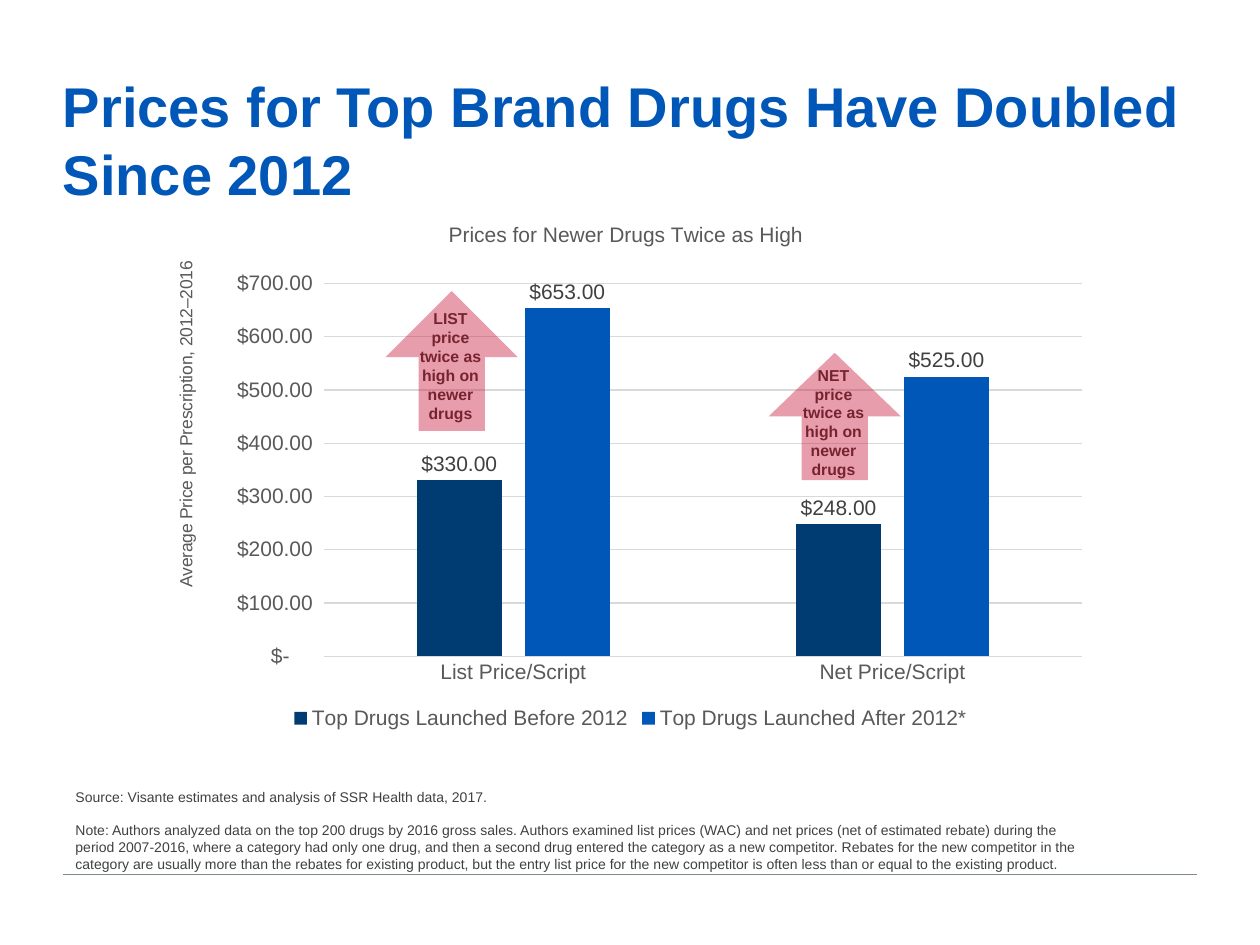
from lxml.etree import SubElement
from pptx import Presentation
from pptx.chart.data import CategoryChartData
from pptx.dml.color import RGBColor
from pptx.enum.chart import (XL_CHART_TYPE as CT, XL_LABEL_POSITION as LP,
                             XL_LEGEND_POSITION as LEG, XL_TICK_MARK as TICK)
from pptx.enum.shapes import MSO_CONNECTOR as CONN, MSO_SHAPE as SHAPE
from pptx.enum.text import PP_ALIGN as AL
from pptx.oxml.ns import qn
from pptx.util import Inches, Pt

# Content
TITLE = "Prices for Top Brand Drugs Have Doubled Since 2012"
NOTES = [
    "Source: Visante estimates and analysis of SSR Health data, 2017.",
    "Note: Authors analyzed data on the top 200 drugs by 2016 gross sales. "
    "Authors examined list prices (WAC) and net prices (net of estimated rebate) "
    "during the period 2007-2016, where a category had only one drug, and then a "
    "second drug entered the category as a new competitor. Rebates for the new "
    "competitor in the category are usually more than the rebates for existing "
    "product, but the entry list price for the new competitor is often less than "
    "or equal to the existing product.",
]
CHART_TITLE = "Prices for Newer Drugs Twice as High"
AXIS_TITLE = "Average Price per Prescription, 2012–2016"
CATEGORIES = ["List Price/Script", "Net Price/Script"]
SERIES = [("Top Drugs Launched Before 2012", (330, 248), "003C71"),
          ("Top Drugs Launched After 2012*", (653, 525), "0057B8")]
MONEY = '_("$"* #,##0.00_);_("$"* \\(#,##0.00\\);_("$"* "-"??_);_(@_)'
# kind of price, arrow left, top, height, text top
ARROWS = [("LIST", 3.06, 2.31, 1.11, 2.4), ("NET", 6.1, 2.8, 1.01, 2.85)]

THEME = dict(
    font="Arial", title="0057B8", note="404040", muted="595959", grid="D9D9D9",
    rule="7C878E", arrow="C60C30", arrow_text="76232F",
    title_sz=32, chart_sz=12, axis_title_sz=10, arrow_sz=9, note_sz=8)
W, H, MARGIN = 10, 7.5, 0.5
CHART_W, CHART_H = 7.47, 4.17
ARROW_W, ARROW_TEXT_W = 1.05, 0.77


def rgb(key):
    return RGBColor.from_string(THEME.get(key, key))


def style(font, size, color, bold=False):
    font.name, font.size, font.bold = THEME["font"], Pt(THEME[size]), bold
    font.color.rgb = rgb(color)


def add_text(s, box, texts, size, color, bold=False, align=AL.LEFT, inset=None):
    tf = s.shapes.add_textbox(*map(Inches, box)).text_frame
    tf.word_wrap = True
    if inset is not None:
        tf.margin_left = tf.margin_right = Inches(inset)
        tf.margin_top = tf.margin_bottom = Inches(inset)
    for i, text in enumerate(texts):
        p = tf.paragraphs[0] if i == 0 else tf.add_paragraph()
        p.text, p.alignment, p.line_spacing = text, align, 1.0
        if i:
            p.space_before = Pt(THEME[size] * 1.15)
        style(p.font, size, color, bold)


def place(parent, index, **inches):
    """Set a manual layout from inches inside the chart."""
    for old in parent.findall(qn("c:layout")):
        parent.remove(old)
    layout = SubElement(parent, qn("c:layout"))
    parent.insert(index, layout)
    manual = SubElement(layout, qn("c:manualLayout"))
    if "w" in inches:
        SubElement(manual, qn("c:layoutTarget")).set("val", "inner")
    for key in "xy":
        SubElement(manual, qn(f"c:{key}Mode")).set("val", "edge")
    for key, length in inches.items():
        share = length / (CHART_W if key in "xw" else CHART_H)
        SubElement(manual, qn(f"c:{key}")).set("val", f"{share:.4f}")


def set_title(title, text, size, x, y):
    p = title.text_frame.paragraphs[0]
    p.text = text
    style(p.font, size, "muted")
    place(title._element, 1, x=x, y=y)


def add_price_chart(s):
    data = CategoryChartData(number_format=MONEY)
    data.categories = CATEGORIES
    for name, values, _ in SERIES:
        data.add_series(name, values)
    box = map(Inches, (1.27, 1.66, CHART_W, CHART_H))
    chart = s.shapes.add_chart(CT.COLUMN_CLUSTERED, *box, data).chart
    style(chart.font, "chart_sz", "muted")
    set_title(chart.chart_title, CHART_TITLE, "chart_sz", 2.26, 0.07)
    chart.has_legend = True
    chart.legend.position, chart.legend.include_in_layout = LEG.BOTTOM, False
    style(chart.legend.font, "chart_sz", "muted")

    # Axes
    cat, val = chart.category_axis, chart.value_axis
    for axis in (cat, val):
        axis.major_tick_mark = axis.minor_tick_mark = TICK.NONE
        style(axis.tick_labels.font, "chart_sz", "muted")
    val.minimum_scale, val.maximum_scale, val.major_unit = 0, 700, 100
    val.tick_labels.number_format = MONEY
    val.tick_labels.number_format_is_linked = False
    val.format.line.fill.background()
    for line in (cat.format.line, val.major_gridlines.format.line):
        line.color.rgb, line.width = rgb("grid"), Pt(0.75)
    set_title(val.axis_title, AXIS_TITLE, "axis_title_sz", 0.09, 0.39)
    place(chart._chartSpace.chart.plotArea, 0, x=1.3, y=0.59, w=6.02, h=2.96)

    # Columns
    plot = chart.plots[0]
    plot.gap_width, plot.overlap, plot.vary_by_categories = 219, -27, False
    for series, (_, _, color) in zip(plot.series, SERIES):
        series.format.fill.solid()
        series.format.fill.fore_color.rgb = rgb(color)
        labels = series.data_labels
        labels.show_value, labels.position = True, LP.OUTSIDE_END
        labels.number_format, labels.number_format_is_linked = MONEY, False
        style(labels.font, "chart_sz", "note")


def add_arrow(s, kind, left, top, height, text_top):
    box = map(Inches, (left, top, ARROW_W, height))
    arrow = s.shapes.add_shape(SHAPE.UP_ARROW, *box)
    arrow.shadow.inherit = False
    arrow.fill.solid()
    arrow.fill.fore_color.rgb = rgb("arrow")
    color = arrow._element.spPr.find(".//" + qn("a:srgbClr"))
    SubElement(color, qn("a:alpha")).set("val", "40000")
    arrow.line.fill.background()
    text_left = left + (ARROW_W - ARROW_TEXT_W) / 2 - 0.01
    add_text(s, (text_left, text_top, ARROW_TEXT_W, 1.01),
             [f"{kind} price twice as high on newer drugs"],
             "arrow_sz", "arrow_text", True, AL.CENTER)


def main():
    prs = Presentation()
    prs.slide_width, prs.slide_height = Inches(W), Inches(H)
    s = prs.slides.add_slide(prs.slide_layouts[6])

    # Footer rule
    ends = map(Inches, (MARGIN, 6.94, W - MARGIN, 6.94))
    rule = s.shapes.add_connector(CONN.STRAIGHT, *ends)
    rule.line.color.rgb, rule.line.width = rgb("rule"), Pt(1)
    SubElement(rule._element.spPr, qn("a:effectLst"))

    # Title and notes
    add_text(s, (MARGIN, 0.57, 9.26, 2.29), [TITLE], "title_sz", "title", True, inset=0)
    add_text(s, (MARGIN, 6.21, 8.29, 0.91), NOTES, "note_sz", "note")

    # Chart with its callout arrows
    add_price_chart(s)
    for arrow in ARROWS:
        add_arrow(s, *arrow)
    prs.save("out.pptx")


if __name__ == "__main__":
    main()
